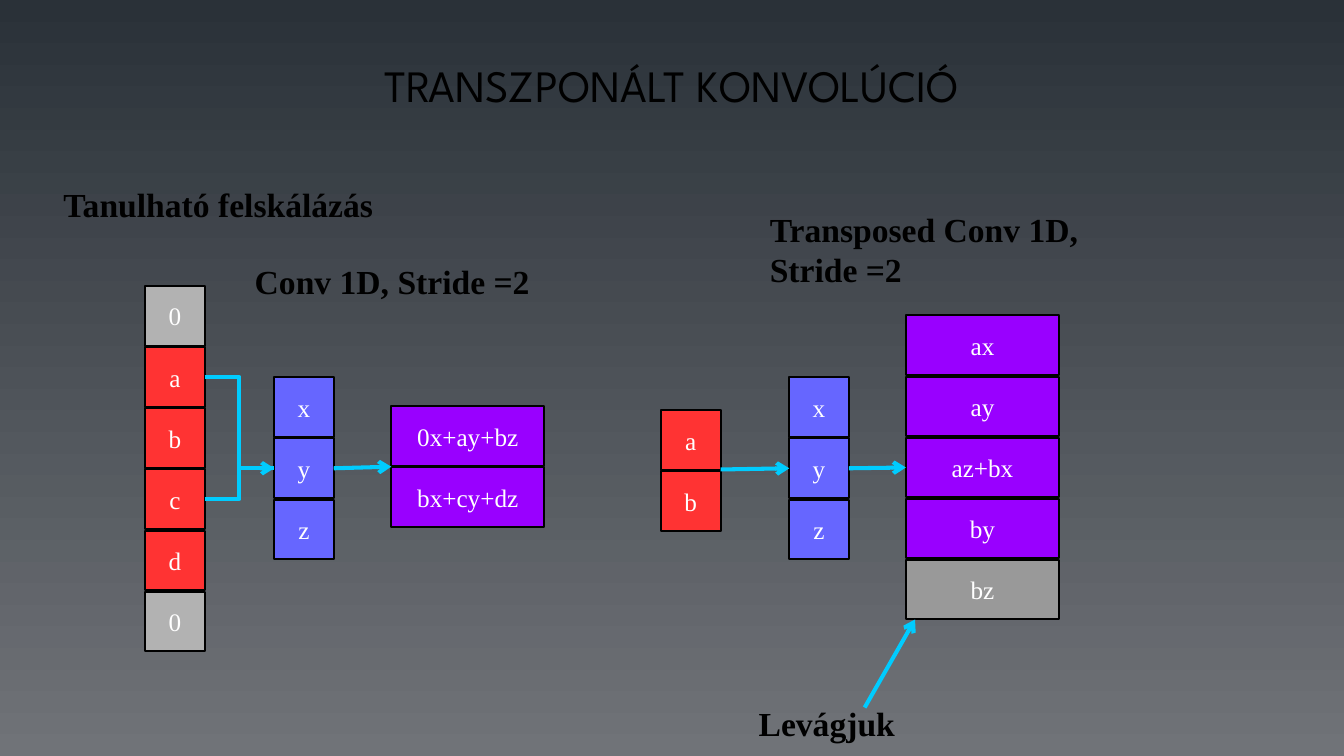
from lxml.etree import SubElement
from pptx import Presentation
from pptx.dml.color import RGBColor
from pptx.enum.shapes import MSO_CONNECTOR as Link, MSO_SHAPE as Shape
from pptx.enum.text import MSO_ANCHOR as Anchor, PP_ALIGN as Align
from pptx.oxml.ns import qn
from pptx.util import Cm, Pt

colour = RGBColor.from_string
RED, BLUE, PURPLE, CYAN = "FF3333", "6666FF", "9900FF", "00CCFF"
LIGHT_GREY, GREY = "B2B2B2", "999999"
SERIF = "Times New Roman"
CELL, WIDE_CELL, PITCH = 1.5, 3.86, 1.54

deck = Presentation()
deck.slide_width, deck.slide_height = Cm(33.87), Cm(19.05)
page = deck.slides.add_slide(deck.slide_layouts[6])

backdrop = page.background.fill
backdrop.gradient()
backdrop.gradient_angle = 270
for stop, tone in zip(backdrop.gradient_stops, ("2A3138", "707378")):
    stop.color.rgb = colour(tone)


def stack(left, top, width, cells):
    """Draw (text, fill) cells from top to bottom and return the boxes."""
    boxes = []
    for row, (text, fill) in enumerate(cells):
        box = page.shapes.add_shape(Shape.RECTANGLE, Cm(left), Cm(top + row * PITCH),
                                    Cm(width), Cm(CELL))
        box.shadow.inherit = False
        box.fill.solid()
        box.fill.fore_color.rgb = colour(fill)
        box.line.color.rgb = colour("000000")
        box.line.width = Pt(1.45)
        frame = box.text_frame
        frame.word_wrap = False
        frame.vertical_anchor = Anchor.MIDDLE
        para = frame.paragraphs[0]
        para.text = text
        para.alignment = Align.CENTER
        para.font.name, para.font.size = SERIF, Pt(18)
        para.font.color.rgb = colour("FFFFFF")
        boxes.append(box)
    return boxes


def connect(start, end, kind=Link.STRAIGHT, head=True):
    """Join two ends, each an (x, y) point in cm or a (box, side) pair."""
    points = [(0, 0) if hasattr(a, "text_frame") else (a, b) for a, b in (start, end)]
    line = page.shapes.add_connector(kind, *[Cm(value) for point in points for value in point])
    if hasattr(start[0], "text_frame"):
        line.begin_connect(*start)
    if hasattr(end[0], "text_frame"):
        line.end_connect(*end)
    line.line.color.rgb = colour(CYAN)
    line.line.width = Pt(2.89)
    if head:
        SubElement(line.line._get_or_add_ln(), qn("a:tailEnd"), type="arrow")
    SubElement(line._element.spPr, qn("a:effectLst"))


title = page.shapes.add_textbox(Cm(3.18), Cm(0.64), Cm(27.51), Cm(2.97)).text_frame
title.word_wrap = True
title.vertical_anchor = Anchor.MIDDLE
para = title.paragraphs[0]
para.text = "TRANSZPONÁLT KONVOLÚCIÓ"
para.alignment = Align.CENTER
para.font.name, para.font.size = "League Spartan", Pt(32)
para.font.color.rgb = colour("000000")

labels = [
    ("Tanulható felskálázás", 1.35, 4.52, 23.88, 1.3),
    ("Conv 1D, Stride =2", 6.17, 6.45, 9.02, 1.3),
    ("Transposed Conv 1D, Stride =2", 19.15, 5.13, 9.04, 2.21),
    ("Levágjuk", 18.87, 17.58, 9.02, 1.3),
]
for text, left, top, width, height in labels:
    frame = page.shapes.add_textbox(Cm(left), Cm(top), Cm(width), Cm(height)).text_frame
    frame.word_wrap = True
    para = frame.paragraphs[0]
    para.text = text
    para.font.name, para.font.size, para.font.bold = SERIF, Pt(24), True
    para.font.color.rgb = colour("000000")

kernel = [(weight, BLUE) for weight in "xyz"]

# Strided convolution
signal = stack(3.66, 7.21, CELL,
               [("0", LIGHT_GREY), *[(name, RED) for name in "abcd"], ("0", LIGHT_GREY)])
conv_kernel = stack(6.91, 9.51, CELL, kernel)
stack(9.86, 10.24, WIDE_CELL, [("0x+ay+bz", PURPLE), ("bx+cy+dz", PURPLE)])
connect((signal[1], 3), (conv_kernel[1], 1), Link.ELBOW)
connect((signal[3], 3), (conv_kernel[1], 1), Link.ELBOW, head=False)
connect((conv_kernel[1], 3), (9.86, 11.76))

# Transposed convolution
stack(16.66, 10.34, CELL, [("a", RED), ("b", RED)])
transposed_kernel = stack(19.89, 9.51, CELL, kernel)
upscaled = stack(22.83, 7.95, WIDE_CELL,
                 [*[(term, PURPLE) for term in ("ax", "ay", "az+bx", "by")], ("bz", GREY)])
connect((18.16, 11.83), (transposed_kernel[1], 1))
connect((transposed_kernel[1], 3), (upscaled[2], 1))
connect((21.79, 17.83), (23.06, 15.61))

deck.save("out.pptx")
